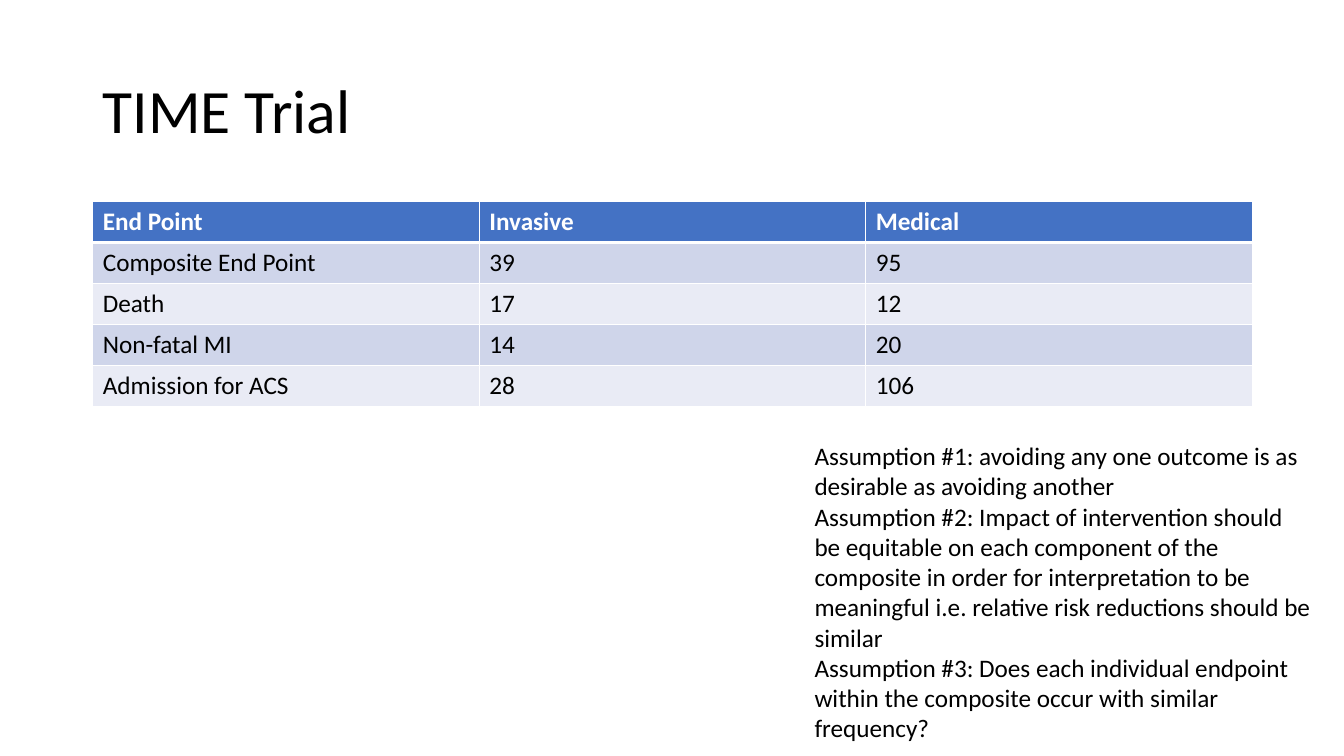
from lxml import etree
from pptx import Presentation
from pptx import util as u
from pptx.dml.color import RGBColor
from pptx.enum import text
from pptx.oxml.ns import qn

FONT = "Calibri"
COLORS = {"ink": "000000", "white": "FFFFFF", "head": "4472C4",
          "odd": "CFD5EA", "even": "E9EBF5"}
ROWS = [
    ("End Point", "Invasive", "Medical"),
    ("Composite End Point", "39", "95"),
    ("Death", "17", "12"),
    ("Non-fatal MI", "14", "20"),
    ("Admission for ACS", "28", "106"),
]
NOTES = [
    "Assumption #1: avoiding any one outcome is as desirable as avoiding another",
    "Assumption #2: Impact of intervention should be equitable on each component "
    "of the composite in order for interpretation to be meaningful i.e. relative "
    "risk reductions should be similar",
    "Assumption #3: Does each individual endpoint within the composite occur with "
    "similar frequency?",
]


def style(frame, size, color="ink", bold=False):
    """Format every run in a text frame."""
    for para in frame.paragraphs:
        for run in para.runs:
            run.font.name = FONT
            run.font.size = u.Pt(size)
            run.font.bold = bold
            run.font.color.rgb = RGBColor.from_string(COLORS[color])


def add_text(slide, box, lines, size):
    """Add a wrapped text box with one paragraph per line."""
    frame = slide.shapes.add_textbox(*map(u.Inches, box)).text_frame
    frame.word_wrap = True
    frame.text = "\n".join(lines)
    style(frame, size)
    return frame


def add_title(slide, box, words):
    """Add the slide title, centred vertically in its box."""
    frame = add_text(slide, box, [words], 44)
    frame.vertical_anchor = text.MSO_ANCHOR.MIDDLE
    frame.paragraphs[0].line_spacing = 0.9


def add_edges(cell, widths):
    """Draw white cell borders from widths in points keyed by side."""
    props = cell._tc.get_or_add_tcPr()
    for side, width in widths.items():
        line = etree.SubElement(props, qn(f"a:ln{side}"), w=str(u.Pt(width)))
        fill = etree.SubElement(line, qn("a:solidFill"))
        etree.SubElement(fill, qn("a:srgbClr"), val=COLORS["white"])


def add_grid(slide, box, rows):
    """Add the banded results table with equal rows and columns."""
    left, top, width, height = map(u.Inches, box)
    table = slide.shapes.add_table(
        len(rows), len(rows[0]), left, top, width, height).table
    for r, row in enumerate(rows):
        band = "head" if r == 0 else "odd" if r % 2 else "even"
        for c, words in enumerate(row):
            cell = table.cell(r, c)
            cell.text_frame.text = words
            style(cell.text_frame, 18, "ink" if r else "white", r == 0)
            add_edges(cell, {"L": 1, "R": 1, "T": 3 if r == 1 else 1,
                             "B": 1 if r else 3})
            cell.fill.solid()
            cell.fill.fore_color.rgb = RGBColor.from_string(COLORS[band])


def main():
    """Build and save the slide."""
    deck = Presentation()
    deck.slide_width, deck.slide_height = u.Inches(13.33), u.Inches(7.5)
    slide = deck.slides.add_slide(deck.slide_layouts[6])
    add_title(slide, (0.92, 0.4, 11.5, 1.45), "TIME Trial")
    add_grid(slide, (0.92, 2, 11.5, 2.03), ROWS)
    add_text(slide, (7.98, 4.32, 5.15, 3.43), NOTES, 18)
    deck.save("out.pptx")


if __name__ == "__main__":
    main()
